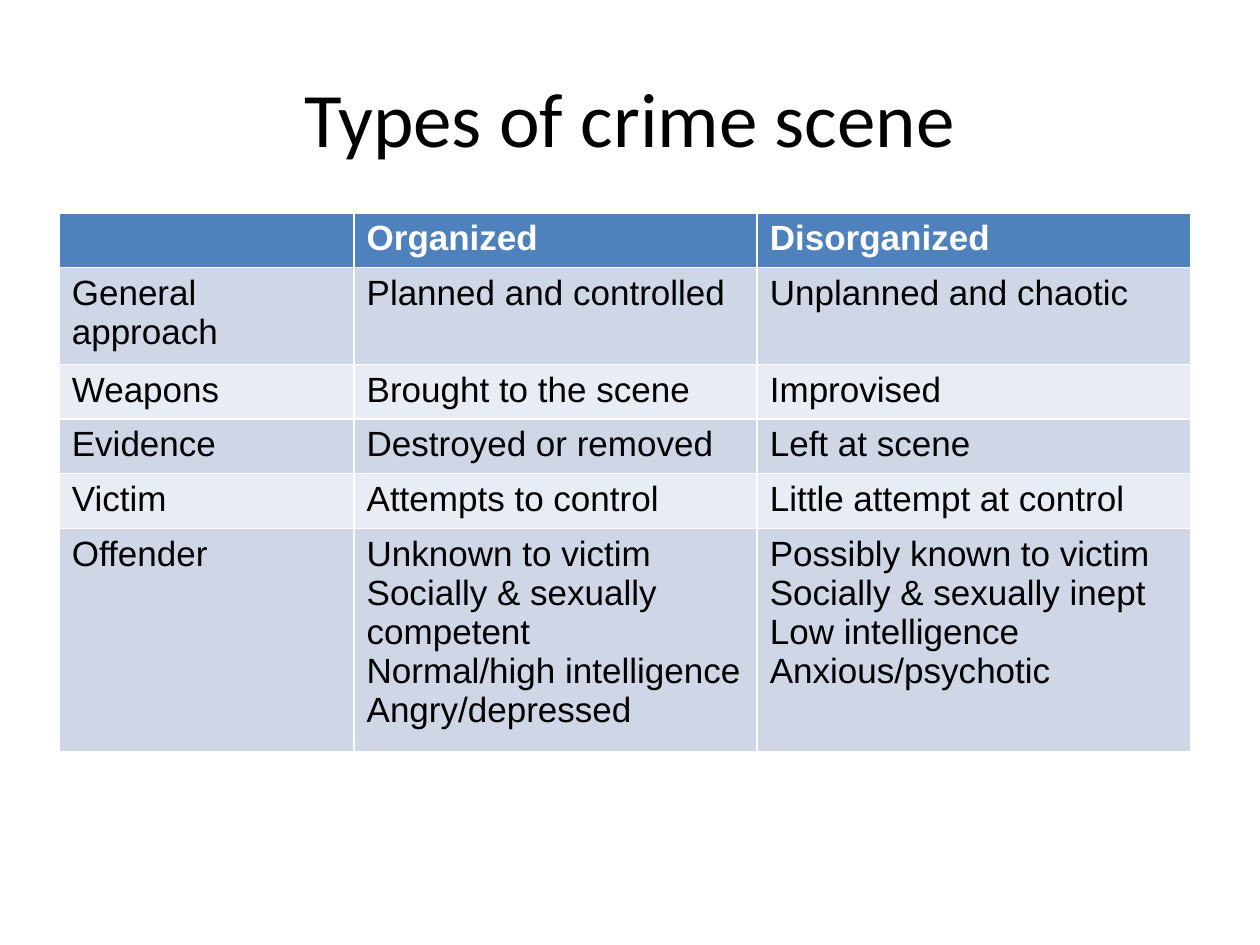
from pptx import Presentation
from pptx.dml.color import RGBColor
from pptx.enum.text import MSO_ANCHOR, PP_ALIGN
from pptx.util import Inches, Pt

# Content: one tuple per table row, one paragraph per line
TITLE = "Types of crime scene"
ROWS = [
    ("", "Organized", "Disorganized"),
    ("General approach", "Planned and controlled", "Unplanned and chaotic"),
    ("Weapons", "Brought to the scene", "Improvised"),
    ("Evidence", "Destroyed or removed", "Left at scene"),
    ("Victim", "Attempts to control", "Little attempt at control"),
    (
        "Offender",
        "Unknown to victim\nSocially & sexually competent\n"
        "Normal/high intelligence\nAngry/depressed",
        "Possibly known to victim\nSocially & sexually inept\n"
        "Low intelligence\nAnxious/psychotic",
    ),
]

# Layout and colours
COLUMN_WIDTHS = [2.34, 3.2, 3.44]
ROW_HEIGHTS = [0.43] * 5 + [1.77]
HEADER_FILL = "4F81BD"
BAND_FILLS = ["E8ECF4", "CFD7E7"]


def color(value):
    return RGBColor.from_string(value)


def write_text(frame, text, size=20, font="Arial", fill="000000", bold=False,
               align=PP_ALIGN.LEFT):
    frame.word_wrap = True
    for index, line in enumerate(text.split("\n")):
        paragraph = frame.add_paragraph() if index else frame.paragraphs[0]
        paragraph.alignment = align
        paragraph.font.size = Pt(size)
        if not line:
            continue
        run = paragraph.add_run()
        run.text = line
        run.font.size = Pt(size)
        run.font.name = font
        run.font.bold = bold
        run.font.color.rgb = color(fill)


presentation = Presentation()
presentation.slide_width, presentation.slide_height = Inches(10), Inches(7.5)
slide = presentation.slides.add_slide(presentation.slide_layouts[6])

# Title
title = slide.shapes.add_textbox(Inches(0.5), Inches(0.3), Inches(9), Inches(1.25))
title.text_frame.vertical_anchor = MSO_ANCHOR.MIDDLE
write_text(title.text_frame, TITLE, size=44, font="Calibri", align=PP_ALIGN.CENTER)

# Comparison table; the default table style draws the white borders
table = slide.shapes.add_table(
    len(ROWS), len(COLUMN_WIDTHS), Inches(0.47), Inches(1.69),
    Inches(sum(COLUMN_WIDTHS)), Inches(sum(ROW_HEIGHTS)),
).table
for column, width in zip(table.columns, COLUMN_WIDTHS):
    column.width = Inches(width)
for row, height in zip(table.rows, ROW_HEIGHTS):
    row.height = Inches(height)

for row_index, texts in enumerate(ROWS):
    is_header = row_index == 0
    for column_index, text in enumerate(texts):
        cell = table.cell(row_index, column_index)
        cell.fill.solid()
        cell.fill.fore_color.rgb = color(
            HEADER_FILL if is_header else BAND_FILLS[row_index % 2])
        write_text(cell.text_frame, text, bold=is_header,
                   fill="FFFFFF" if is_header else "000000")

presentation.save("out.pptx")
